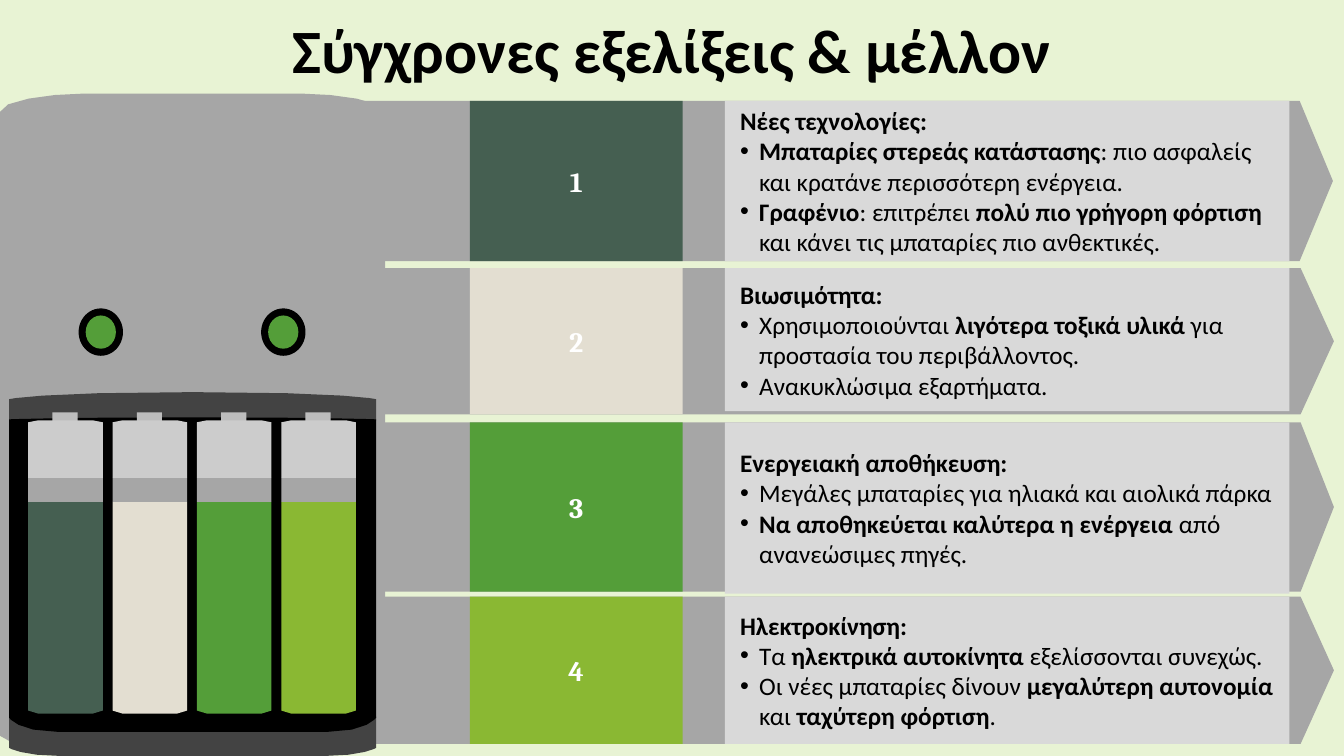
from dataclasses import dataclass

from lxml.etree import SubElement
from pptx import Presentation
from pptx.dml.color import RGBColor
from pptx.enum.shapes import MSO_SHAPE
from pptx.enum.text import MSO_ANCHOR, PP_ALIGN
from pptx.oxml.ns import qn
from pptx.shapes.autoshape import Shape
from pptx.text.text import _Paragraph as Para
from pptx.util import Inches, Pt

COLORS = {
    "back": "E8F3D4", "black": "000000", "white": "FFFFFF",
    "gray": "A6A6A6", "panel": "D9D9D9", "dark": "434343",
    "tip": "BDBDBD", "cap": "CCCCCC",
    "pine": "455F51", "sand": "E3DED1", "green": "549E39", "lime": "8AB833",
}
Points = list[tuple[float, ...]]


@dataclass
class Row:
    color: str
    left: float
    tip: float
    top: float
    high: float
    panel: float  # height of the text panel
    head: str
    items: list[str]  # bold parts stand between ** marks


@dataclass
class Part:
    color: str
    half: Points  # left half; six numbers make a curve


ROWS = [
    Row("pine", 3.47, 13.22, 1, 1.59, 1.59, "Νέες τεχνολογίες:", [
        "**Μπαταρίες στερεάς κατάστασης**: πιο ασφαλείς και κρατάνε περισσότερη ενέργεια.",
        "**Γραφένιο**: επιτρέπει **πολύ πιο γρήγορη φόρτιση** και κάνει τις μπαταρίες πιο ανθεκτικές.",
    ]),
    Row("sand", 3.51, 13.23, 2.66, 1.45, 1.42, "Βιωσιμότητα:", [
        "Χρησιμοποιούνται **λιγότερα τοξικά υλικά** για προστασία του περιβάλλοντος.",
        "Ανακυκλώσιμα εξαρτήματα.",
    ]),
    Row("green", 3.51, 13.23, 4.19, 1.68, 1.7, "Ενεργειακή αποθήκευση:", [
        "Μεγάλες μπαταρίες για ηλιακά και αιολικά πάρκα",
        "**Να αποθηκεύεται καλύτερα η ενέργεια** από ανανεώσιμες πηγές.",
    ]),
    Row("lime", 3.51, 13.23, 5.92, 1.46, 1.46, "Ηλεκτροκίνηση:", [
        "Τα **ηλεκτρικά αυτοκίνητα** εξελίσσονται συνεχώς.",
        "Οι νέες μπαταρίες δίνουν **μεγαλύτερη αυτονομία** και **ταχύτερη φόρτιση**.",
    ]),
]
AXIS = 1.91  # middle of the charger
CHARGER = [
    Part("gray", [(0.8, 0.93), (0.49, 0.93, 0, 1, 0, 1.11),
                  (0, 7.3), (0.09, 7.35), (0.09, 3.97),
                  (0.09, 3.97, 0.37, 3.9, AXIS, 3.9)]),
    Part("dark", [(AXIS, 3.89), (0.37, 3.89, 0.09, 3.96, 0.09, 3.96),
                  (0.09, 4.17), (0.09, 4.17, 0.62, 4.15, AXIS, 4.15)]),
    Part("dark", [(0.57, 7.25), (0.18, 7.25, 0.09, 7.11, 0.09, 7.11),
                  (0.09, 7.42), (0.09, 7.42, 0.22, 7.5, 0.61, 7.5)]),
    Part("black", [(AXIS, 4.14), (0.62, 4.14, 0.09, 4.16, 0.09, 4.16),
                   (0.09, 7.12), (0.09, 7.12, 0.18, 7.26, 0.57, 7.26)]),
]

deck = Presentation()
deck.slide_width, deck.slide_height = Inches(13.33), Inches(7.5)
slide = deck.slides.add_slide(deck.slide_layouts[6])
shapes = slide.shapes


def rgb(color: str) -> RGBColor:
    return RGBColor.from_string(COLORS[color])


def paint(shape: Shape, color: str) -> Shape:
    shape.shadow.inherit = False
    shape.fill.solid()
    shape.fill.fore_color.rgb = rgb(color)
    shape.line.fill.background()
    return shape


def block(color: str, x: float, y: float, w: float, h: float,
          kind: MSO_SHAPE = MSO_SHAPE.RECTANGLE) -> Shape:
    return paint(shapes.add_shape(kind, Inches(x), Inches(y), Inches(w), Inches(h)), color)


def polygon(color: str, points: Points) -> Shape:
    (x, y), *rest = [(Inches(a), Inches(b)) for a, b in points]
    form = shapes.build_freeform(x, y)
    form.add_line_segments(rest, close=True)
    return paint(form.convert_to_shape(), color)


def trace(path: Points, steps: int = 4) -> Points:
    """Turn lines and Bezier curves into a few plain points."""
    out: Points = []
    for step in path:
        if len(step) == 2:
            out.append(step)
            continue
        ends = [out[-1], step[:2], step[2:4], step[4:]]
        for i in range(1, steps + 1):
            t = i / steps
            mix = ((1 - t) ** 3, 3 * t * (1 - t) ** 2, 3 * t * t * (1 - t), t ** 3)
            out.append(tuple(sum(m * p[k] for m, p in zip(mix, ends)) for k in (0, 1)))
    return out


def mirror(part: Part, axis: float, shift: float = 0) -> Shape:
    half = trace(part.half)
    left = [(x + shift, y) for x, y in half]
    right = [(2 * axis - x + shift, y) for x, y in reversed(half) if x < axis]
    return polygon(part.color, left + right)


def style(para: Para, name: str, size: float, color: str) -> None:
    para.font.name, para.font.size = name, Pt(size)
    para.font.color.rgb = rgb(color)


def label(para: Para, text: str, name: str, size: float, color: str,
          align: PP_ALIGN = PP_ALIGN.CENTER) -> None:
    para.alignment = align
    style(para, name, size, color)
    para.font.bold = True
    para.add_run().text = text


def bullet(para: Para, text: str) -> None:
    para.alignment = PP_ALIGN.LEFT
    props = para._p.get_or_add_pPr()
    props.set("marL", str(Inches(0.19)))
    props.set("indent", str(-Inches(0.19)))
    SubElement(props, qn("a:buFont")).set("typeface", "Arial")
    SubElement(props, qn("a:buChar")).set("char", "•")
    style(para, "Calibri", 18, "black")
    for i, piece in enumerate(text.split("**")):
        if piece:
            run = para.add_run()
            run.text = piece
            run.font.bold = i % 2 == 1


def inset(shape: Shape) -> None:
    frame = shape.text_frame
    frame.word_wrap = True
    frame.vertical_anchor = MSO_ANCHOR.MIDDLE
    frame.margin_left = frame.margin_right = Inches(0.15)
    frame.margin_top = frame.margin_bottom = Inches(0.1)


def band(row: Row, num: int) -> None:
    y, end, neck = row.top, row.top + row.high, row.tip - 0.33
    polygon("gray", [(neck, y), (row.left, y), (row.left, end), (neck, end),
                     (row.tip, y + row.high / 2)])
    panel = block("panel", 7.19, y, 5.6, row.panel)
    inset(panel)
    frame = panel.text_frame
    label(frame.paragraphs[0], row.head, "Calibri", 18, "black", PP_ALIGN.LEFT)
    for item in row.items:
        bullet(frame.add_paragraph(), item)
    tile = block(row.color, 4.66, y, 2.11, row.high)
    inset(tile)
    label(tile.text_frame.paragraphs[0], str(num), "Cambria", 20, "white")


def cell(color: str, x: float) -> None:
    body = [(0, 4.98), (0, 7.05), (0.1, 7.08)]
    cap = [(0.1, 4.17), (0, 4.19), (0, 4.74)]
    mirror(Part(color, body), 0.37, x)
    block("gray", x, 4.74, 0.74, 0.24)
    block("tip", x + 0.24, 4.09, 0.25, 0.11)
    mirror(Part("cap", cap), 0.37, x)


# Background and title
slide.background.fill.solid()
slide.background.fill.fore_color.rgb = rgb("back")
title = shapes.add_textbox(0, Inches(0.07), deck.slide_width, Inches(0.84)).text_frame
title.word_wrap = True
label(title.paragraphs[0], "Σύγχρονες εξελίξεις & μέλλον", "Calibri", 44, "black")

# Arrow bands
for num, row in enumerate(ROWS, 1):
    band(row, num)

# Charger with one cell per band
for part in CHARGER:
    mirror(part, AXIS)
for i, row in enumerate(ROWS):
    cell(row.color, 0.28 + 2.51 * i / 3)

# Lights
for x in (0.78, 2.59):
    block("black", x, 3.06, 0.44, 0.47, MSO_SHAPE.OVAL)
    block("green", x + 0.07, 3.13, 0.3, 0.33, MSO_SHAPE.OVAL)

deck.save("out.pptx")
